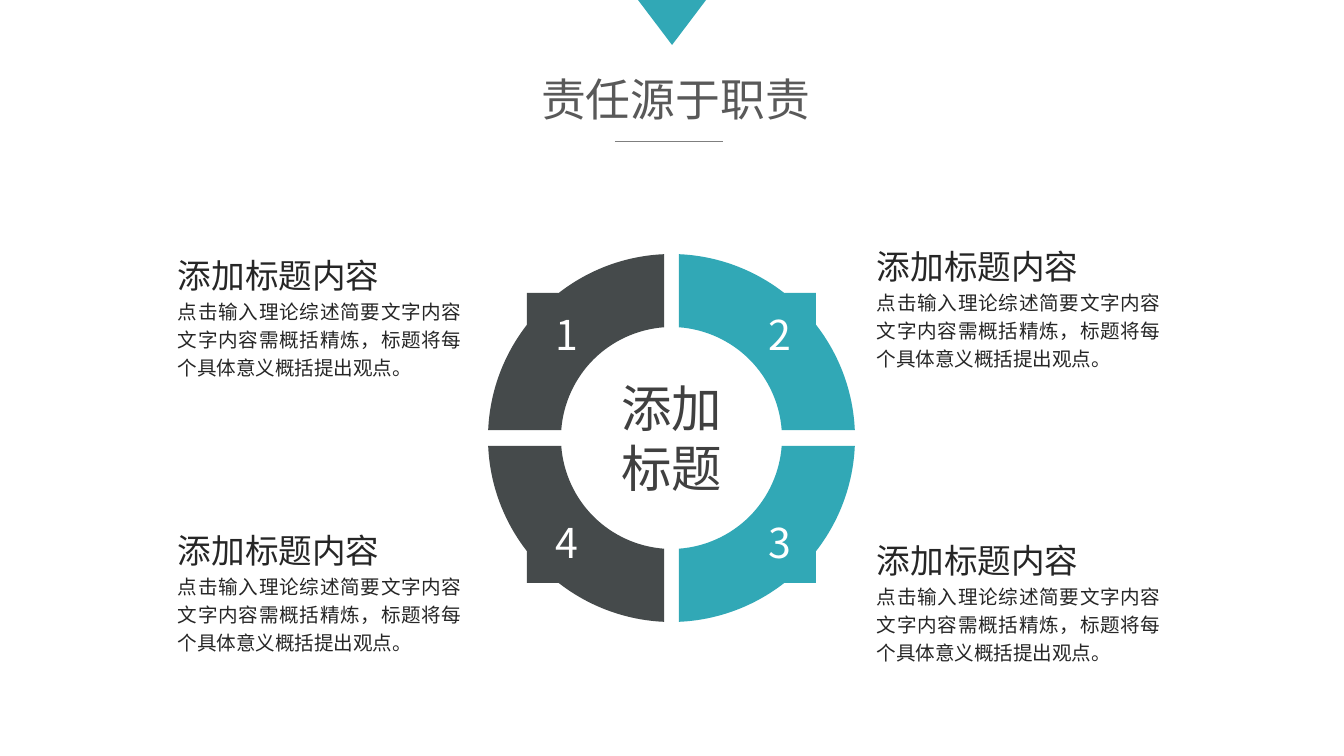
from math import asin, cos, pi, sin, tan

from lxml.etree import SubElement
from pptx import Presentation
from pptx.dml.color import RGBColor
from pptx.enum.shapes import MSO_CONNECTOR, MSO_SHAPE
from pptx.enum.text import MSO_ANCHOR, MSO_AUTO_SIZE, PP_ALIGN
from pptx.oxml.ns import qn
from pptx.util import Pt

PX = 914400 / 134.4
FONT = "Noto Sans CJK SC"
TEAL = RGBColor(0x31, 0xA8, 0xB6)
SLATE = RGBColor(0x45, 0x4A, 0x4B)
WHITE = RGBColor(0xFF, 0xFF, 0xFF)
LINE_GRAY = RGBColor(0x7F, 0x7F, 0x7F)
TITLE_GRAY = RGBColor(0x59, 0x59, 0x59)
CENTER_GRAY = RGBColor(0x40, 0x40, 0x40)
BODY_GRAY = RGBColor(0x26, 0x26, 0x26)

TITLE = "责任源于职责"
CENTER_LABEL = "添加标题"
HEADING = "添加标题内容"
DETAIL = "点击输入理论综述简要文字内容文字内容需概括精炼，标题将每个具体意义概括提出观点。"
QUADRANTS = [
    dict(number="1", side=-1, level=-1, color=SLATE, center_x=672, note=(178, 235)),
    dict(number="2", side=1, level=-1, color=TEAL, center_x=671, note=(877, 226)),
    dict(number="3", side=1, level=1, color=TEAL, center_x=671, note=(877, 520)),
    dict(number="4", side=-1, level=1, color=SLATE, center_x=672, note=(178, 510)),
]

CENTER_Y = 438
OUTER, INNER, HALF_GAP, CORNER = 184, 111, 8, 145
CURVE_STARTS = (0, 5, 9, 12)


def px(*lengths):
    return [round(length * PX) for length in lengths]


def write(frame, *lines, align=PP_ALIGN.CENTER, color=BODY_GRAY):
    for index, (text, size, spacing) in enumerate(lines):
        paragraph = frame.paragraphs[0] if index == 0 else frame.add_paragraph()
        paragraph.alignment = align
        paragraph.line_spacing = spacing
        run = paragraph.add_run()
        run.text = text
        run.font.size = Pt(size)
        run.font.name = FONT
        run.font.color.rgb = color
        SubElement(run.font._element, qn("a:ea"), typeface=FONT)


def add_text(slide, box, *lines, **text_format):
    frame = slide.shapes.add_textbox(*px(*box)).text_frame
    frame.margin_left = frame.margin_right = 0
    frame.margin_top = frame.margin_bottom = 0
    frame.word_wrap = True
    frame.auto_size = MSO_AUTO_SIZE.SHAPE_TO_FIT_TEXT
    write(frame, *lines, **text_format)


def paint(shape, color):
    shape.shadow.inherit = False
    shape.fill.solid()
    shape.fill.fore_color.rgb = color
    shape.line.fill.background()


def arc(radius, start, end):
    reach = 4 / 3 * tan((end - start) / 4)
    return [
        (radius * (cos(angle) - pull * sin(angle)), radius * (sin(angle) + pull * cos(angle)))
        for angle, pull in ((start, 0), (start, reach), (end, -reach), (end, 0))
    ]


def quadrant_outline():
    outer_gap, inner_gap = asin(HALF_GAP / OUTER), asin(HALF_GAP / INNER)
    notch = asin(CORNER / OUTER)
    return (
        arc(OUTER, outer_gap, pi / 2 - notch)
        + [(CORNER, CORNER)]
        + arc(OUTER, notch, pi / 2 - outer_gap)
        + arc(INNER, pi / 2 - inner_gap, pi / 4)
        + arc(INNER, pi / 4, inner_gap)[1:]
    )


def bend(shape):
    segments = list(shape._element.iter(qn("a:lnTo")))
    for start in CURVE_STARTS:
        curve, *rest = segments[start:start + 3]
        curve.tag = qn("a:cubicBezTo")
        for segment in rest:
            curve.append(segment[0])
            segment.getparent().remove(segment)


def add_quadrant(slide, number, side, level, color, center_x, note):
    points = [px(center_x + side * x, CENTER_Y + level * y) for x, y in quadrant_outline()]
    builder = slide.shapes.build_freeform(*points[0])
    builder.add_line_segments(points[1:], close=True)
    quadrant = builder.convert_to_shape()
    bend(quadrant)
    paint(quadrant, color)
    number_box = (center_x + side * 107 - 9, CENTER_Y + level * 104 - 25, 22, 50)
    add_text(slide, number_box, (number, 22, 1.0), color=WHITE)
    add_text(slide, (*note, 284, 146), (HEADING, 18, 1.5), (DETAIL, 10.5, 1.2),
             align=PP_ALIGN.JUSTIFY)


def main():
    presentation = Presentation()
    presentation.slide_width, presentation.slide_height = px(1344, 756)
    slide = presentation.slides.add_slide(presentation.slide_layouts[5])

    title = slide.shapes.title
    title.left, title.top, title.width, title.height = px(526, 65, 299, 67)
    title.text_frame.word_wrap = False
    title.text_frame.auto_size = MSO_AUTO_SIZE.NONE
    title.text_frame.vertical_anchor = MSO_ANCHOR.MIDDLE
    write(title.text_frame, (TITLE, 24, 1.0), color=TITLE_GRAY)

    pointer = slide.shapes.add_shape(MSO_SHAPE.ISOSCELES_TRIANGLE, *px(638, 0, 68, 45))
    pointer.rotation = 180
    paint(pointer, TEAL)

    underline = slide.shapes.add_connector(MSO_CONNECTOR.STRAIGHT, *px(615, 142, 723, 142))
    underline.line.color.rgb = LINE_GRAY
    underline.line.width = Pt(0.5)
    SubElement(underline._element.spPr, qn("a:effectLst"))

    for quadrant in QUADRANTS:
        add_quadrant(slide, **quadrant)
    add_text(slide, (603, 377, 137, 122), (CENTER_LABEL, 27, 1.0), color=CENTER_GRAY)

    presentation.save("out.pptx")


if __name__ == "__main__":
    main()
